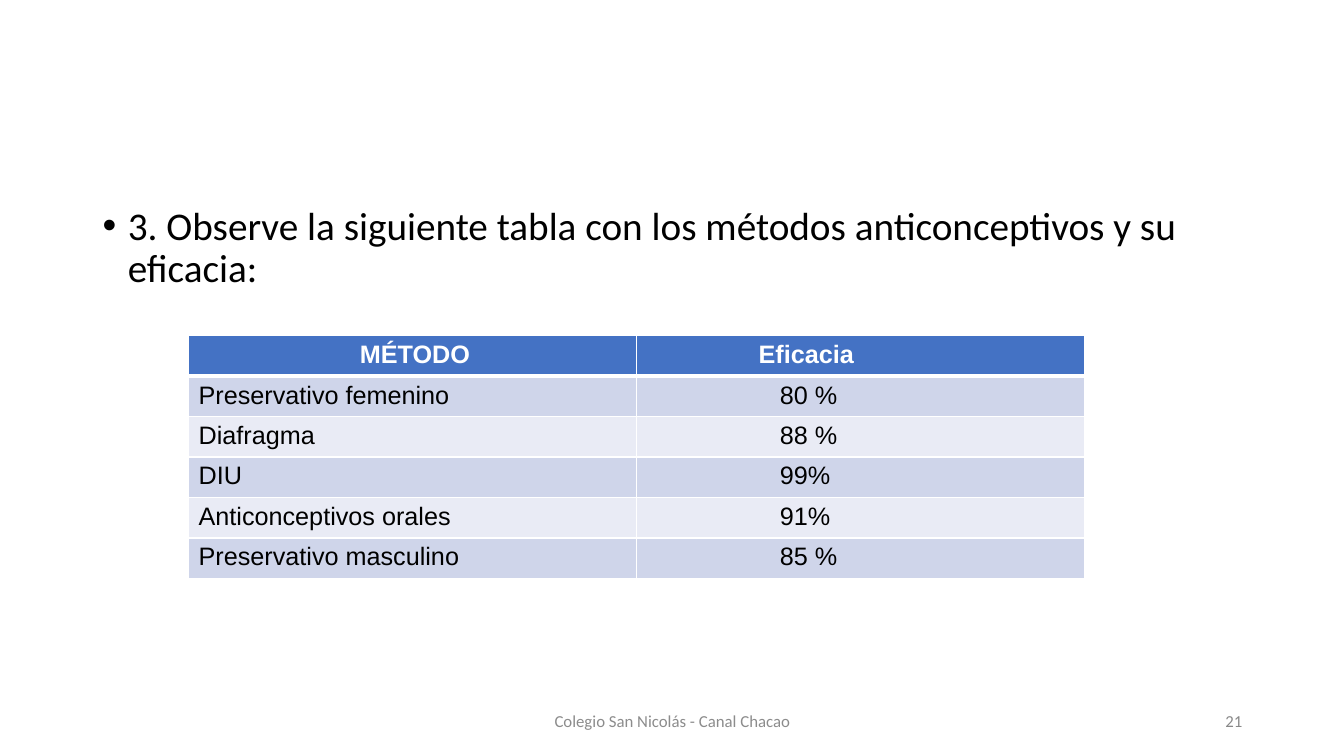
from lxml import etree
from pptx import Presentation
from pptx.dml.color import RGBColor
from pptx.enum.text import MSO_ANCHOR, PP_ALIGN
from pptx.oxml.ns import qn
from pptx.util import Inches, Pt

CENTER, RIGHT = PP_ALIGN.CENTER, PP_ALIGN.RIGHT
TOP, MIDDLE = MSO_ANCHOR.TOP, MSO_ANCHOR.MIDDLE

COLORS = {
    "text": "000000",
    "footer": "8C8C8C",
    "number": "898989",
    "white": "FFFFFF",
    "header": "4472C4",
    "odd": "CFD5EA",
    "even": "E9EBF5",
}
METHODS = [
    ("MÉTODO", "Eficacia"),
    ("Preservativo femenino", "80 %"),
    ("Diafragma", "88 %"),
    ("DIU", "99%"),
    ("Anticonceptivos orales", "91%"),
    ("Preservativo masculino", "85 %"),
]
HEADER_INDENTS = (1.6, 1.11)
BODY_INDENTS = (0, 1.32)


def rgb(name):
    return RGBColor.from_string(COLORS[name])


def style(paragraph, font, size, color, bold=False):
    for run in paragraph.runs:
        run.font.name = font
        run.font.size = Pt(size)
        run.font.bold = bold
        run.font.color.rgb = rgb(color)


def set_indent(paragraph, left, hanging=0):
    properties = paragraph._p.get_or_add_pPr()
    properties.set("marL", str(Inches(left)))
    properties.set("indent", str(-Inches(hanging)))
    return properties


def add_text(slide, box, text, size, color, align=None, anchor=TOP):
    frame = slide.shapes.add_textbox(*map(Inches, box)).text_frame
    frame.word_wrap = True
    frame.vertical_anchor = anchor
    frame.text = text
    paragraph = frame.paragraphs[0]
    paragraph.alignment = align
    style(paragraph, "Calibri", size, color)
    return paragraph


def add_question(slide, box):
    question = add_text(
        slide, box,
        "3. Observe la siguiente tabla con los métodos anticonceptivos y su eficacia:",
        28, "text")
    question.line_spacing = 0.9
    properties = set_indent(question, 0.25, 0.25)
    etree.SubElement(properties, qn("a:buFont"), typeface="Arial")
    etree.SubElement(properties, qn("a:buChar"), char="•")


def add_border(cell, side, width):
    line = etree.SubElement(cell._tc.get_or_add_tcPr(), qn(f"a:ln{side}"), w=str(Pt(width)))
    fill = etree.SubElement(line, qn("a:solidFill"))
    etree.SubElement(fill, qn("a:srgbClr"), val=COLORS["white"])


def add_methods_table(slide, box):
    table = slide.shapes.add_table(len(METHODS), 2, *map(Inches, box)).table
    for row, entries in enumerate(METHODS):
        is_header = row == 0
        band = "header" if is_header else "odd" if row % 2 else "even"
        indents = HEADER_INDENTS if is_header else BODY_INDENTS
        for column, entry in enumerate(entries):
            cell = table.cell(row, column)
            for side in "LRTB":
                thick = (is_header and side == "B") or (row == 1 and side == "T")
                add_border(cell, side, 3 if thick else 1)
            cell.fill.solid()
            cell.fill.fore_color.rgb = rgb(band)
            cell.text = entry
            paragraph = cell.text_frame.paragraphs[0]
            set_indent(paragraph, indents[column])
            style(paragraph, "Arial", 18, "white" if is_header else "text", is_header)


def add_footer(slide, box):
    left, top, width, height = box
    label_width, number_width = 4.5, 3
    add_text(slide, (left + (width - label_width) / 2, top, label_width, height),
             "Colegio San Nicolás - Canal Chacao", 12, "footer", CENTER, MIDDLE)
    add_text(slide, (left + width - number_width, top, number_width, height),
             "21", 12, "number", RIGHT, MIDDLE)


def main():
    presentation = Presentation()
    presentation.slide_width = Inches(13.33)
    presentation.slide_height = Inches(7.5)
    slide = presentation.slides.add_slide(presentation.slide_layouts[6])
    add_question(slide, (0.92, 2, 11.5, 4.76))
    add_footer(slide, (0.92, 6.95, 11.5, 0.4))
    add_methods_table(slide, (1.87, 3.33, 8.89, 2.41))
    presentation.save("out.pptx")


if __name__ == "__main__":
    main()
